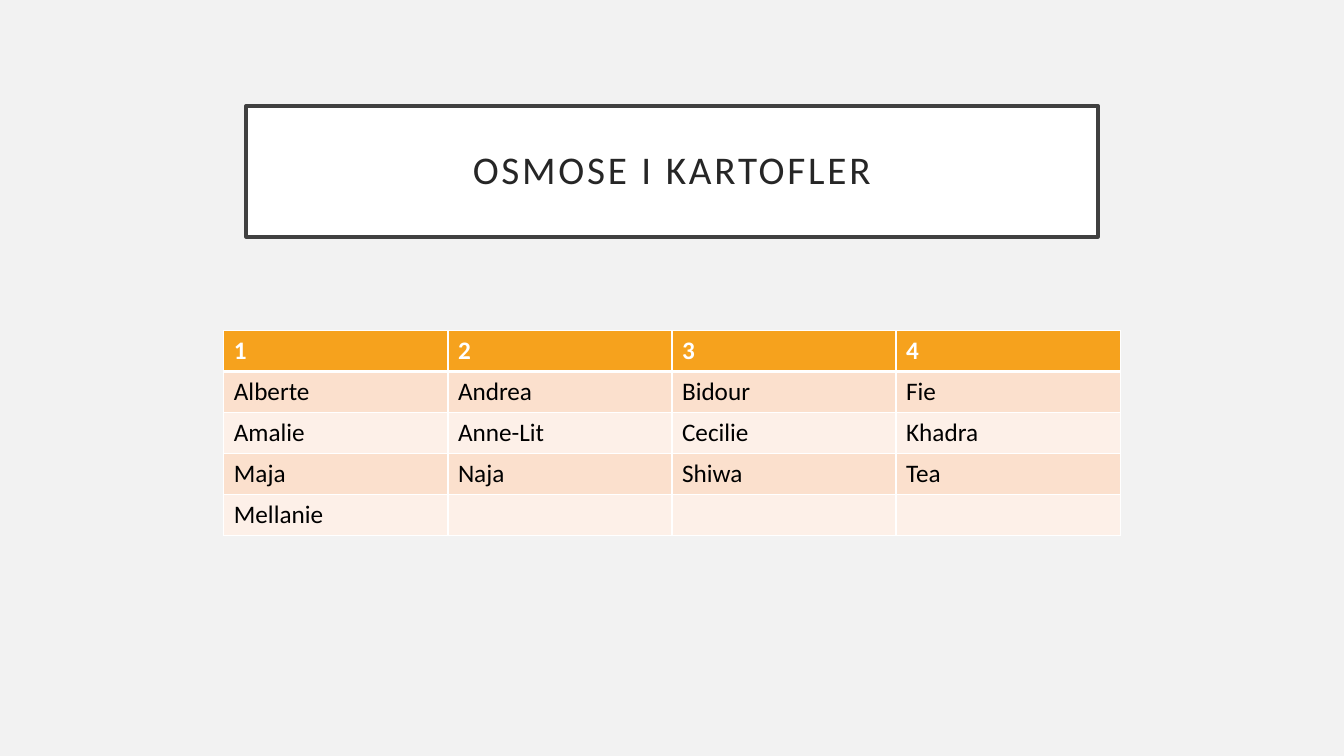
from dataclasses import dataclass

from lxml import etree
from pptx import Presentation
from pptx import util as u
from pptx.dml.color import RGBColor
from pptx.enum import text
from pptx.oxml import ns


@dataclass(frozen=True)
class Theme:
    """Colours, font and type sizes of the slide."""
    font: str = "Calibri"
    title_size: int = 28
    table_size: int = 18
    background: str = "F2F2F2"
    white: str = "FFFFFF"
    frame: str = "404040"
    title: str = "262626"
    body: str = "000000"
    header: str = "F6A21D"
    bands: tuple = ("FBE0CD", "FDF0E8")


THEME = Theme()
GROUPS = [
    ["1", "2", "3", "4"],
    ["Alberte", "Andrea", "Bidour", "Fie"],
    ["Amalie", "Anne-Lit", "Cecilie", "Khadra"],
    ["Maja", "Naja", "Shiwa", "Tea"],
    ["Mellanie", "", "", ""],
]


def paint(fill, colour):
    """Give a fill one solid colour."""
    fill.solid()
    fill.fore_color.rgb = RGBColor.from_string(colour)


def style_runs(para, size, colour, bold=False):
    """Format every run of a paragraph."""
    for span in para.runs:
        span.font.name = THEME.font
        span.font.size = u.Pt(size)
        span.font.bold = bold
        span.font.color.rgb = RGBColor.from_string(colour)


def add_border(cell, side, points):
    """Draw a white border on one side of a cell."""
    line = etree.SubElement(cell._tc.get_or_add_tcPr(), ns.qn(f"a:ln{side}"), w=str(u.Pt(points)))
    fill = etree.SubElement(line, ns.qn("a:solidFill"))
    etree.SubElement(fill, ns.qn("a:srgbClr"), val=THEME.white)


def place_title(page, wording, left, top, width, height):
    """Place the framed title in the given box."""
    box = page.shapes.title
    box.left, box.top, box.width, box.height = map(u.Inches, (left, top, width, height))
    paint(box.fill, THEME.white)
    box.line.color.rgb = RGBColor.from_string(THEME.frame)
    box.line.width = u.Pt(2.5)
    frame = box.text_frame
    frame.text = wording
    frame.word_wrap = True
    frame.auto_size = text.MSO_AUTO_SIZE.NONE
    frame.vertical_anchor = text.MSO_ANCHOR.MIDDLE
    frame.margin_left = frame.margin_right = u.Inches(0.2)
    frame.margin_top = frame.margin_bottom = u.Inches(0.2)
    para = frame.paragraphs[0]
    para.alignment = text.PP_ALIGN.CENTER
    para.line_spacing = 0.9
    style_runs(para, THEME.title_size, THEME.title)
    for span in para.runs:
        span.font._element.set("spc", "200")


def place_groups(page, rows, left, top, width, height):
    """Place the table of groups in the given box."""
    bounds = map(u.Inches, (left, top, width, height))
    table = page.shapes.add_table(len(rows), len(rows[0]), *bounds).table
    for row_index, names in enumerate(rows):
        is_header = row_index == 0
        background = THEME.header if is_header else THEME.bands[(row_index - 1) % 2]
        colour = THEME.white if is_header else THEME.body
        for column_index, name in enumerate(names):
            cell = table.cell(row_index, column_index)
            add_border(cell, "L", 1)
            add_border(cell, "R", 1)
            add_border(cell, "T", 3 if row_index == 1 else 1)
            add_border(cell, "B", 3 if is_header else 1)
            paint(cell.fill, background)
            if name:
                cell.text_frame.text = name
                style_runs(cell.text_frame.paragraphs[0], THEME.table_size, colour, is_header)


def main():
    """Build the slide and save it."""
    deck = Presentation()
    deck.slide_width, deck.slide_height = u.Inches(13.33), u.Inches(7.5)
    page = deck.slides.add_slide(deck.slide_layouts.get_by_name("Title Only"))
    paint(page.background.fill, THEME.background)
    place_title(page, "OSMOSE I KARTOFLER", 2.44, 1.05, 8.45, 1.3)
    place_groups(page, GROUPS, 2.22, 3.28, 8.89, 2.03)
    deck.save("out.pptx")


if __name__ == "__main__":
    main()
